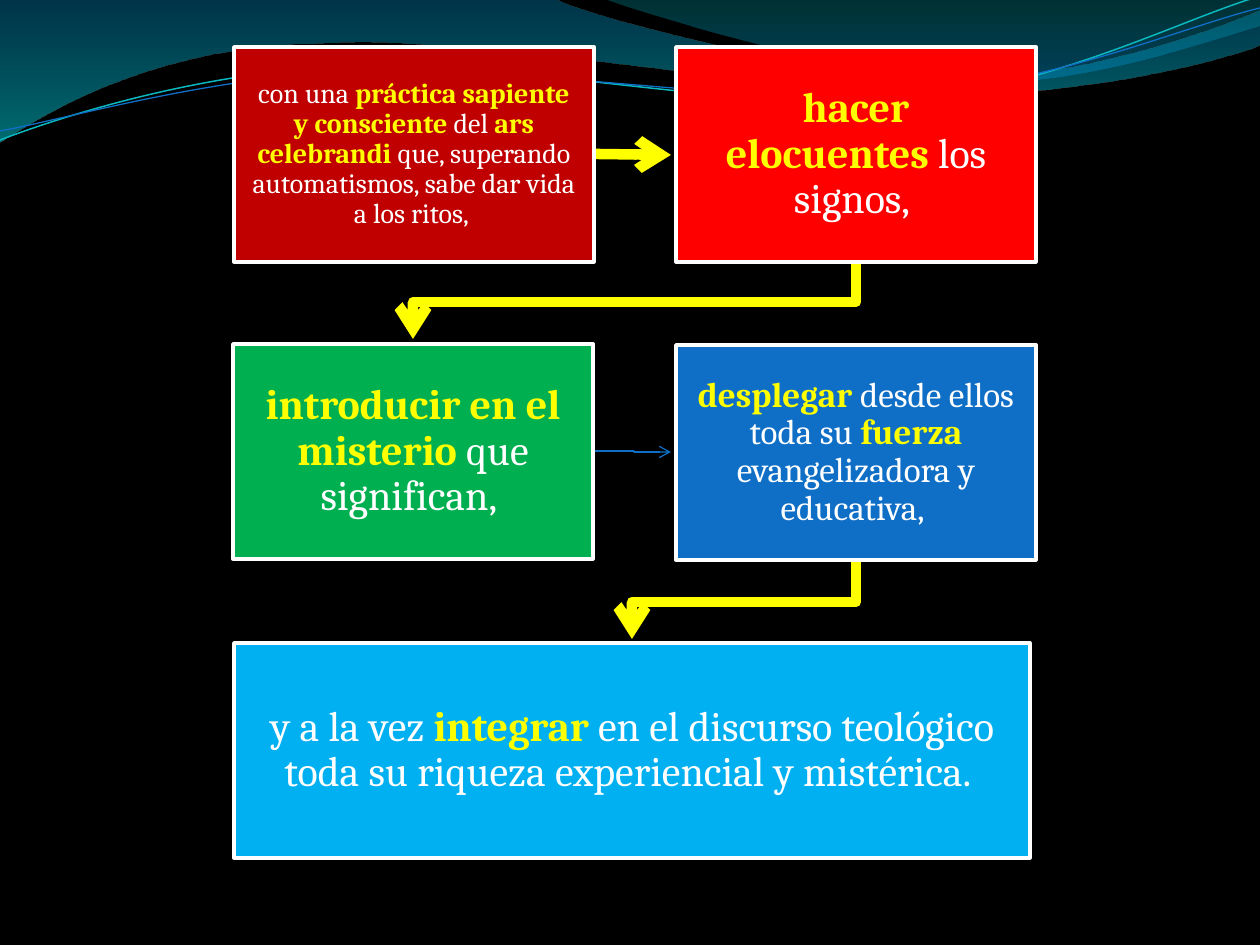
from lxml import etree
from pptx import Presentation
from pptx import util as u
from pptx.dml.color import RGBColor
from pptx.enum import shapes, text
from pptx.oxml.ns import qn

PX = 914400 / 126
COLORS = {
    "black": "000000", "white": "FFFFFF", "yellow": "FFFF00", "blue": "0F6FC6",
    "dark red": "C00000", "red": "FF0000", "green": "00B050", "sky": "00B0F0",
    "cyan": "0AB8BF", "deep": "0074A1", "aqua": "00C6CF", "teal": "00A1A9",
    "sea": "008BBF",
}
rgb = {name: RGBColor.from_string(value) for name, value in COLORS.items()}

deck = Presentation()
deck.slide_width, deck.slide_height = round(1260 * PX), round(945 * PX)
page = deck.slides.add_slide(deck.slide_layouts[6])
page.background.fill.solid()
page.background.fill.fore_color.rgb = rgb["black"]


def draw_path(steps, closed=False):
    """Outline through (x, y) corners and (x1, y1, x2, y2, x, y) curves."""
    points = [(step[i] * PX, step[i + 1] * PX)
              for step in steps for i in range(0, len(step), 2)]
    builder = page.shapes.build_freeform(*points[0])
    builder.add_line_segments(points[1:], close=closed)
    shape = builder.convert_to_shape()
    shape.shadow.inherit = False
    # Three straight segments become one Bézier curve
    segments = iter(list(shape._element.iter(qn("a:lnTo"))))
    for step in steps[1:]:
        segment = next(segments)
        if len(step) == 6:
            segment.addprevious(curve := etree.Element(qn("a:cubicBezTo")))
            for part in (segment, next(segments), next(segments)):
                curve.append(part[0])
                part.getparent().remove(part)
    return shape


def style_line(shape, color, width, arrow=False):
    shape.line.color.rgb = rgb[color]
    shape.line.width = u.Pt(width)
    if arrow:
        etree.SubElement(shape.line._get_or_add_ln(), qn("a:tailEnd"), type="arrow")


# Translucent waves at the top
waves = [
    ([(0, 0), (554, -1), (600, 21, 837, 79, 955, 79), (1075, 79, 1207, 33, 1260, 11),
      (1261, 45), (1239, 55, 1096, 96, 940, 94), (784, 94, 481, 35, 324, 43),
      (163, 45, 58, 105, -1, 142)],
     [(0, "deep", 45), (1, "aqua", 55)]),
    ([(604, -1), (641, 14, 859, 78, 969, 82), (1079, 87, 1211, 40, 1260, 26), (1260, 0)],
     [(0, "teal", 30), (0.8, "sea", 45)]),
]
for steps, stops in waves:
    wave = draw_path(steps, closed=True)
    wave.line.fill.background()
    wave.fill.gradient()
    wave.fill.gradient_angle = 270
    for stop, (position, color, opacity) in zip(wave.fill.gradient_stops, stops):
        stop.position = position
        stop.color.rgb = rgb[color]
        tint = stop._gs.find(qn("a:srgbClr"))
        etree.SubElement(tint, qn("a:alpha"), val=str(opacity * 1000))

# Thin curves over the waves
curves = [
    ([(0, 140), (60, 117, 199, 72, 349, 66), (498, 59, 747, 112, 898, 101),
      (1050, 89, 1182, 19, 1257, -3)], "cyan", 0.85),
    ([(0, 131), (59, 121, 207, 77, 357, 71), (508, 64, 752, 106, 903, 95),
      (1053, 84, 1186, 26, 1260, 8)], "blue", 0.75),
]
for steps, color, width in curves:
    ribbon = draw_path(steps)
    ribbon.fill.background()
    style_line(ribbon, color, width)

# Arrows between the steps
arrows = [
    ([(594, 154), (671, 155)], "yellow", 6),
    ([(856, 262), (856, 302), (413, 302), (413, 339)], "yellow", 6),
    ([(593, 451), (634, 451), (634, 452), (671, 452)], "blue", 0.75),
    ([(856, 561), (856, 602), (632, 602), (632, 639)], "yellow", 6),
]
for steps, color, width in arrows:
    arrow = draw_path(steps)
    arrow.fill.background()
    style_line(arrow, color, width, arrow=True)

# Steps: left, top, width, fill, text size, inset, text with *emphasis*
boxes = [
    (234, 47, 360, "dark red", 16, 15,
     "con una *práctica sapiente y consciente *del *ars celebrandi* que, superando "
     "automatismos, sabe dar vida a los ritos, "),
    (676, 47, 360, "red", 24, 24, "*hacer elocuentes *los signos, "),
    (233, 344, 360, "green", 24, 24, "*introducir en el misterio *que significan, "),
    (676, 345, 360, "blue", 20, 20,
     "*desplegar* desde ellos toda su *fuerza *evangelizadora y educativa, "),
    (234, 643, 796, "sky", 24, 24,
     "y a la vez *integrar* en el discurso teológico toda su riqueza experiencial "
     "y mistérica. "),
]
for left, top, width, color, size, inset, words in boxes:
    box = page.shapes.add_shape(
        shapes.MSO_SHAPE.RECTANGLE, *(round(n * PX) for n in (left, top, width, 215)))
    box.shadow.inherit = False
    box.fill.solid()
    box.fill.fore_color.rgb = rgb[color]
    style_line(box, "white", 2)
    frame = box.text_frame
    frame.word_wrap = True
    frame.vertical_anchor = text.MSO_ANCHOR.MIDDLE
    for side in ("left", "top", "right", "bottom"):
        setattr(frame, f"margin_{side}", round(inset * PX))
    para = frame.paragraphs[0]
    para.alignment = text.PP_ALIGN.CENTER
    para.line_spacing = 0.9
    for i, part in enumerate(words.split("*")):
        if not part:
            continue
        strong = i % 2 == 1
        span = para.add_run()
        span.text = part
        for name, value in {"name": "Cambria", "size": u.Pt(size), "bold": strong}.items():
            setattr(span.font, name, value)
        span.font.color.rgb = rgb["yellow" if strong else "white"]

deck.save("out.pptx")
